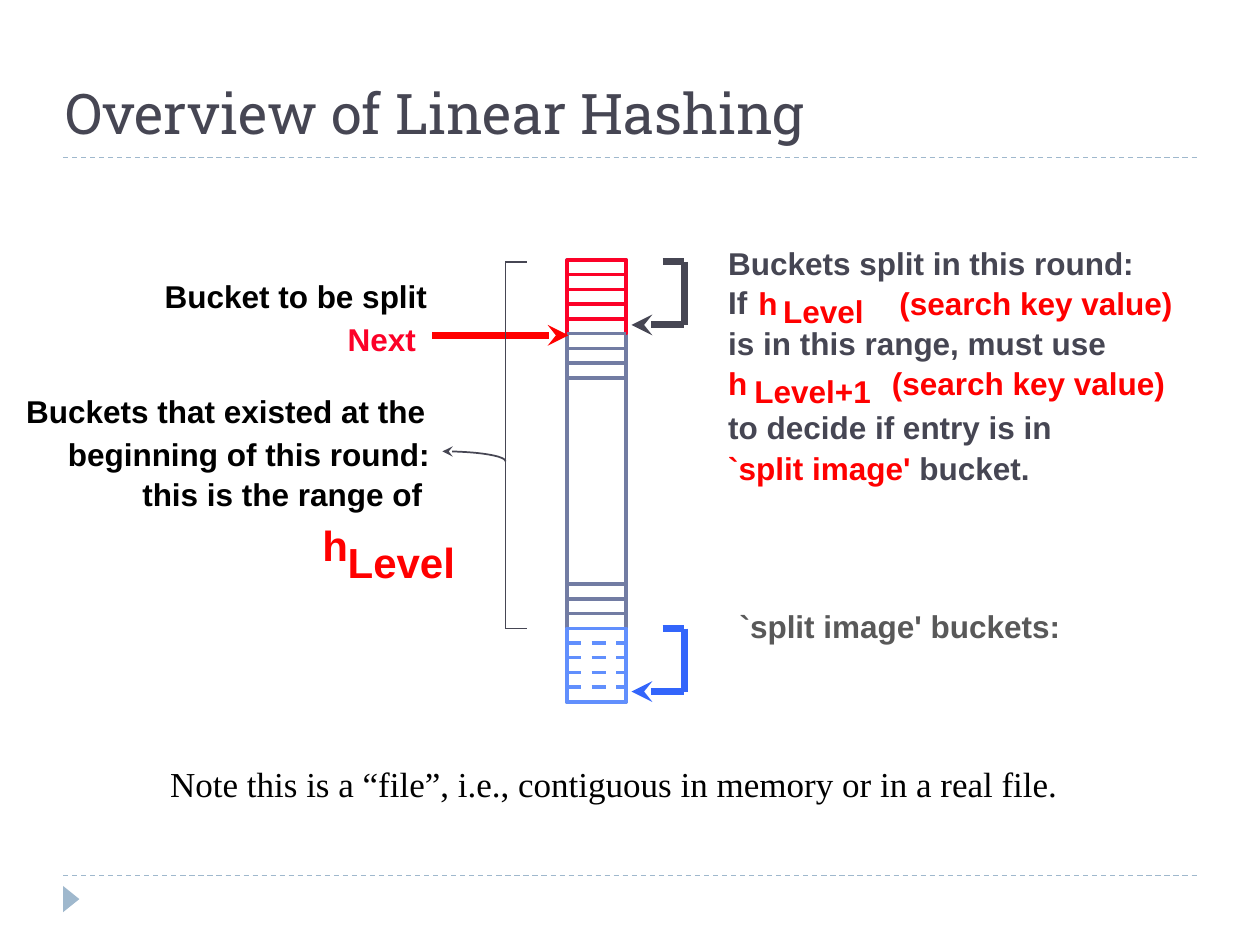
from math import cos, pi, sin

from lxml.etree import SubElement
from pptx import Presentation
from pptx.dml.color import RGBColor
from pptx.enum.dml import MSO_LINE
from pptx.enum.shapes import MSO_CONNECTOR, MSO_SHAPE
from pptx.enum.text import MSO_ANCHOR, MSO_AUTO_SIZE, PP_ALIGN
from pptx.oxml.ns import qn
from pptx.util import Cm, Pt

COLORS = {
    "ink": "464653", "black": "000000", "red": "FF0000", "crimson": "FC0128",
    "grey": "595959", "slate": "727CA3", "sky": "618FFD", "blue": "3365FB",
    "rule": "9FB8CD",
}
TITLE = "Overview of Linear Hashing"
NOTE = "Note this is a “file”, i.e., contiguous in memory or in a real file."
SEARCH_KEY = "(search key value)"

# left, top and width in centimetres, then the runs
RANGE_HASH = [
    (6.76, 10.69, 2.69, [("Level", "red")]),
    (6.25, 10.34, 1.27, [("h", "red")]),
]
RANGE_LABELS = [
    (0.28, 7.77, 8.56, [("Buckets that existed at the", "black")]),
    (1.12, 8.64, 7.98, [("beginning of this round:", "black")]),
    (2.62, 9.45, 6.15, [("this is the range of", "black")]),
]
NEXT_LABELS = [
    (6.76, 6.32, 1.88, [("Next", "crimson")]),
    (3.07, 5.46, 5.97, [("Bucket to be split", "black")]),
]
RULE_LEFT = 14.43
SPLIT_RULE = [
    (RULE_LEFT, 4.8, 8.69, [("Buckets split in this round:", "ink")]),
    (RULE_LEFT, 5.59, 1.07, [("If", "ink")]),
    (15.04, 5.61, 1.07, [("h", "red")]),
    (15.54, 5.77, 2.13, [("Level", "red")]),
    (17.88, 5.61, 6.25, [(SEARCH_KEY, "red")]),
    (RULE_LEFT, 6.4, 8.13, [("is in this range, must use", "ink")]),
    (RULE_LEFT, 7.21, 1.07, [("h", "red")]),
    (14.96, 7.37, 2.87, [("Level+1", "red")]),
    (17.73, 7.21, 6.25, [(SEARCH_KEY, "red")]),
    (RULE_LEFT, 8.1, 7.21, [("to decide if entry is in", "ink")]),
    (RULE_LEFT, 8.92, 6.65, [("`split image' ", "red"), ("bucket.", "ink")]),
]
IMAGE_LABELS = [(14.66, 12.12, 7.1, [("`split image' buckets:", "grey")])]
LABEL_GROUPS = [
    (24, 1.27, RANGE_HASH),
    (18, 1.02, RANGE_LABELS + NEXT_LABELS + SPLIT_RULE + IMAGE_LABELS),
]

FILE_LEFT, FILE_RIGHT, FILE_TOP = 11.43, 12.62, 5.24
BUCKET_HEIGHT = 0.297
FILE_SECTIONS = [
    {"first": 0, "count": 30, "dividers": [22, 23, 24], "tint": "slate", "dash": False},
    {"first": 25, "count": 5, "dividers": [26, 27, 28, 29], "tint": "sky", "dash": True},
    {"first": 0, "count": 5, "dividers": [1, 2, 3, 4], "tint": "crimson", "dash": False},
]
UNSPLIT_DIVIDERS = [5, 6, 7, 8]

ROUND_TOP, ROUND_BOTTOM = 5.28, 12.67
BRACKETS = [(ROUND_TOP, "ink"), (ROUND_BOTTOM, "blue")]
BRACKET_LEFT, BRACKET_RIGHT, BRACKET_TIP, BRACKET_HEIGHT = 13.36, 13.79, 12.73, 1.27
RANGE_LEFT, RANGE_RIGHT = 10.19, 10.62
NEXT_Y, NEXT_START, NEXT_TIP = 6.76, 8.71, 11.46
CURVE_LEFT, CURVE_BOTTOM, CURVE_WIDTH, CURVE_HEIGHT = 8.92, 9.3, 1.27, 0.2
CURVE_STEPS = 16
RULE_HEIGHTS = (17.65, 3.18)


def color(name):
    return RGBColor.from_string(COLORS[name])


def write(frame, runs, size, font="Arial", bold=False, wrap=False,
          fit=MSO_AUTO_SIZE.SHAPE_TO_FIT_TEXT, anchor=MSO_ANCHOR.TOP):
    frame.word_wrap = wrap
    frame.auto_size = fit
    frame.vertical_anchor = anchor
    paragraph = frame.paragraphs[0]
    paragraph.alignment = PP_ALIGN.LEFT
    for words, tint in runs:
        run = paragraph.add_run()
        run.text = words
        run.font.size = Pt(size)
        run.font.name = font
        run.font.bold = bold
        run.font.color.rgb = color(tint)


def stroke(part, tint, width, dash=False, arrow=False):
    part.line.color.rgb = color(tint)
    part.line.width = Pt(width)
    if dash:
        part.line.dash_style = MSO_LINE.DASH
    if arrow:
        outline = part._element.spPr.find(qn("a:ln"))
        SubElement(outline, qn("a:headEnd"), type="stealth")


def segment(shapes, start, end, tint, width, **style):
    ends = [Cm(value) for value in (*start, *end)]
    part = shapes.add_connector(MSO_CONNECTOR.STRAIGHT, *ends)
    stroke(part, tint, width, **style)
    SubElement(part._element.spPr, qn("a:effectLst"))


def bucket_edge(number):
    return FILE_TOP + number * BUCKET_HEIGHT


def draw_dividers(shapes, numbers, tint, dash=False):
    for number in numbers:
        y = bucket_edge(number)
        segment(shapes, (FILE_LEFT, y), (FILE_RIGHT, y), tint, 2, dash=dash)


def draw_file(shapes):
    for section in FILE_SECTIONS:
        outline = shapes.add_shape(
            MSO_SHAPE.RECTANGLE, Cm(FILE_LEFT), Cm(bucket_edge(section["first"])),
            Cm(FILE_RIGHT - FILE_LEFT), Cm(section["count"] * BUCKET_HEIGHT))
        outline.shadow.inherit = False
        outline.fill.background()
        stroke(outline, section["tint"], 2)
        draw_dividers(shapes, section["dividers"], section["tint"], section["dash"])
    draw_dividers(shapes, UNSPLIT_DIVIDERS, "slate")


def draw_brackets(shapes):
    for top, tint in BRACKETS:
        bracket = shapes.add_group_shape().shapes
        bottom = top + BRACKET_HEIGHT
        upper, lower = (BRACKET_RIGHT, top), (BRACKET_RIGHT, bottom)
        segment(bracket, (BRACKET_LEFT, top), upper, tint, 4)
        segment(bracket, upper, lower, tint, 4)
        segment(bracket, (BRACKET_TIP, bottom), lower, tint, 4, arrow=True)


def draw_range(shapes):
    for y in (ROUND_TOP, ROUND_BOTTOM):
        segment(shapes, (RANGE_RIGHT, y), (RANGE_LEFT, y), "ink", 1)
    segment(shapes, (RANGE_LEFT, ROUND_TOP), (RANGE_LEFT, ROUND_BOTTOM), "ink", 1)

    angles = [pi / 2 * step / CURVE_STEPS for step in range(CURVE_STEPS + 1)]
    points = [(Cm(CURVE_LEFT + CURVE_WIDTH * sin(angle)),
               Cm(CURVE_BOTTOM - CURVE_HEIGHT * cos(angle))) for angle in angles]
    builder = shapes.build_freeform(*points[0])
    builder.add_line_segments(points[1:], close=False)
    curve = builder.convert_to_shape()
    curve.shadow.inherit = False
    curve.fill.background()
    stroke(curve, "ink", 1, arrow=True)


def draw_decoration(shapes):
    for y in RULE_HEIGHTS:
        segment(shapes, (1.27, y), (24.13, y), "rule", 0.75, dash=True)
    marker = shapes.add_shape(
        MSO_SHAPE.ISOSCELES_TRIANGLE, Cm(1.17), Cm(17.96), Cm(0.53), Cm(0.33))
    marker.rotation = 90
    marker.shadow.inherit = False
    marker.fill.solid()
    marker.fill.fore_color.rgb = color("rule")
    marker.line.fill.background()


def draw_texts(shapes):
    title = shapes.title
    title.left, title.top, title.width, title.height = Cm(1.06), Cm(0), Cm(21.59), Cm(3.07)
    write(title.text_frame, [(TITLE, "ink")], 32, font="Roboto Slab", wrap=True,
          fit=MSO_AUTO_SIZE.NONE, anchor=MSO_ANCHOR.BOTTOM)
    for size, height, labels in LABEL_GROUPS:
        for left, top, width, runs in labels:
            label = shapes.add_textbox(Cm(left), Cm(top), Cm(width), Cm(height))
            write(label.text_frame, runs, size, bold=True)
    note = shapes.add_textbox(Cm(3.18), Cm(15.24), Cm(19.25), Cm(1.12))
    write(note.text_frame, [(NOTE, "black")], 20, font="Times New Roman", wrap=True)


def main():
    deck = Presentation()
    deck.slide_width, deck.slide_height = Cm(25.4), Cm(19.05)
    shapes = deck.slides.add_slide(deck.slide_layouts[5]).shapes
    draw_decoration(shapes)
    draw_texts(shapes)
    draw_file(shapes)
    draw_brackets(shapes)
    segment(shapes, (NEXT_TIP, NEXT_Y), (NEXT_START, NEXT_Y), "red", 4, arrow=True)
    draw_range(shapes)
    deck.save("out.pptx")


if __name__ == "__main__":
    main()
